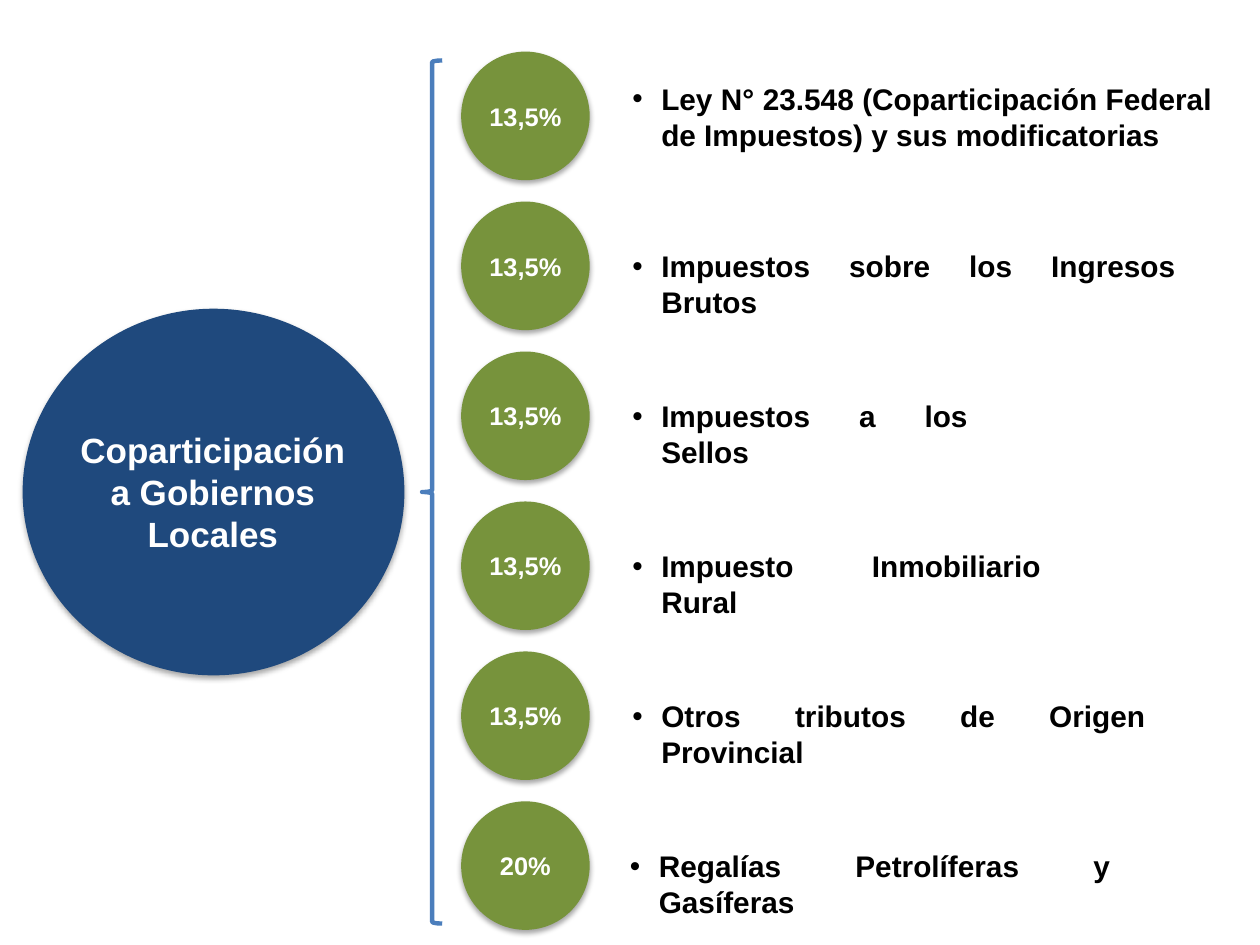
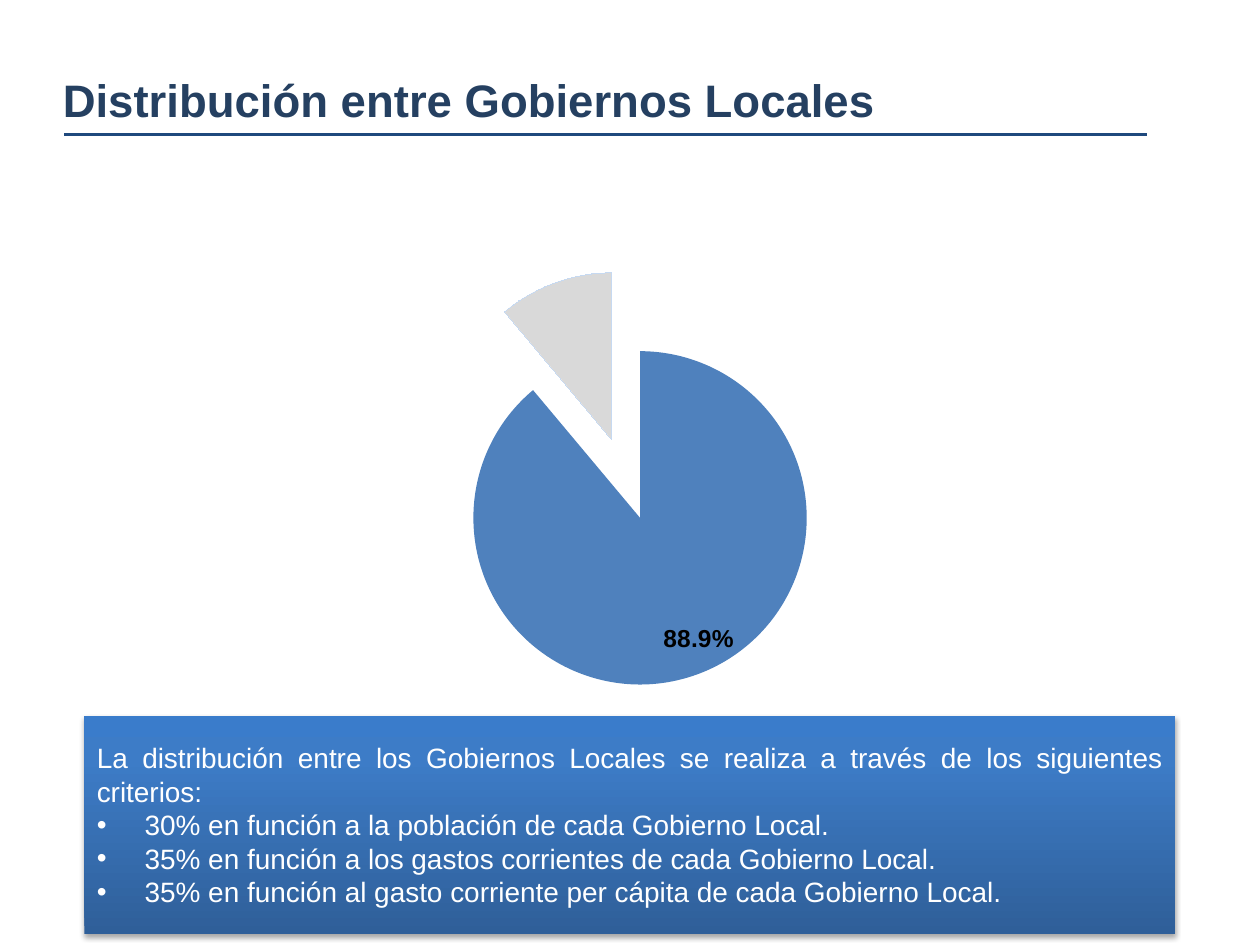
from dataclasses import dataclass
from typing import Any

from lxml.etree import SubElement
from pptx import Presentation
from pptx.chart.data import CategoryChartData
from pptx.dml.color import RGBColor
from pptx.enum.chart import XL_CHART_TYPE as ChartKind, XL_LABEL_POSITION as LabelPlace
from pptx.enum.shapes import MSO_CONNECTOR as Connector, MSO_SHAPE as Preset
from pptx.enum.text import MSO_ANCHOR as Anchor, PP_ALIGN as Align
from pptx.oxml.ns import qn
from pptx.util import Inches, Pt

WHITE = RGBColor(0xFF, 0xFF, 0xFF)
BLACK = RGBColor(0x00, 0x00, 0x00)
NAVY = RGBColor(0x1F, 0x49, 0x7D)
TITLE_NAVY = RGBColor(0x25, 0x40, 0x61)
GREEN = RGBColor(0x77, 0x93, 0x3C)
BRACE_BLUE = RGBColor(0x4B, 0x7E, 0xBC)
PIE_BLUE = RGBColor(0x4F, 0x81, 0xBD)
PIE_GREY = RGBColor(0xD9, 0xD9, 0xD9)
PALE_BLUE = RGBColor(0xC6, 0xD9, 0xF1)
PANEL_STOPS = ((0, RGBColor(0x2F, 0x5F, 0x99)), (80, RGBColor(0x3D, 0x7C, 0xC7)),
               (100, RGBColor(0x3A, 0x7C, 0xCB)))

FIRST_TOP, ROW_PITCH, CIRCLE_SIZE = 0.41, 1.19, 1.02
PERCENT_FORMAT = "0.0%"


@dataclass(frozen=True)
class TextStyle:
    """Size, colour and alignment of a paragraph."""
    size: float
    color: RGBColor
    bold: bool = True
    align: Align = Align.LEFT


@dataclass(frozen=True)
class Box:
    """Place of an element in inches."""
    left: float
    top: float
    width: float
    height: float

    def lengths(self) -> list:
        """Return the four lengths for python-pptx."""
        return [Inches(v) for v in (self.left, self.top, self.width, self.height)]


@dataclass(frozen=True)
class Tax:
    """A shared tax with its percentage."""
    share: str
    name: str
    width: float
    left: float = 4.92
    drop: float = 0.32


TITLE = TextStyle(26, TITLE_NAVY)
SHARE = TextStyle(14.5, WHITE, align=Align.CENTER)
HUB = TextStyle(20, WHITE, align=Align.CENTER)
TAX = TextStyle(17, BLACK, align=Align.JUSTIFY)
CRITERIA_LEAD = TextStyle(16, WHITE, False, Align.JUSTIFY)
CRITERION = TextStyle(16, WHITE, False)

TAXES = (
    Tax("13,5%", "Ley N° 23.548 (Coparticipación Federal de Impuestos) y sus modificatorias",
        4.8, drop=0.18),
    Tax("13,5%", "Impuestos sobre los Ingresos Brutos", 4.51),
    Tax("13,5%", "Impuestos a los Sellos", 2.86),
    Tax("13,5%", "Impuesto Inmobiliario Rural", 3.44),
    Tax("13,5%", "Otros tributos de Origen Provincial", 4.27),
    Tax("20%", "Regalías Petrolíferas y Gasíferas", 4.01, left=4.9),
)
CRITERIA = (
    "30% en función a la población de cada Gobierno Local.",
    "35% en función a los gastos corrientes de cada Gobierno Local.",
    "35% en función al gasto corriente per cápita de cada Gobierno Local.",
)


def apply(target: Any, values: dict) -> None:
    """Set each named attribute on the target."""
    for name, value in values.items():
        setattr(target, name, value)


def write(paragraph: Any, text: str, style: TextStyle, indent: float = 0) -> None:
    """Fill a paragraph, bulleted when it has an indent."""
    if indent:
        props = paragraph._p.get_or_add_pPr()
        props.set("marL", str(Inches(indent)))
        props.set("indent", str(-Inches(indent)))
        SubElement(props, qn("a:buFont")).set("typeface", "Arial")
        SubElement(props, qn("a:buChar")).set("char", "•")
    run = paragraph.add_run()
    run.text = text
    paragraph.alignment = style.align
    apply(run.font, {"name": "Arial", "size": Pt(style.size), "bold": style.bold})
    run.font.color.rgb = style.color


def add_text(slide: Any, box: Box, text: str, style: TextStyle, indent: float = 0) -> None:
    """Add a wrapping text box with one paragraph."""
    frame = slide.shapes.add_textbox(*box.lengths()).text_frame
    frame.word_wrap = True
    write(frame.paragraphs[0], text, style, indent)


def add_raised(slide: Any, preset: Preset, box: Box) -> Any:
    """Add a borderless shape with a soft shadow below."""
    shape = slide.shapes.add_shape(preset, *box.lengths())
    shape.line.fill.background()
    shape.shadow.inherit = False
    effects = shape._element.spPr.find(qn("a:effectLst"))
    shadow = SubElement(effects, qn("a:outerShdw"), blurRad=str(Pt(3.1)), dist=str(Pt(1.8)),
                        dir="5400000", rotWithShape="0")
    tone = SubElement(shadow, qn("a:srgbClr"), val=str(BLACK))
    SubElement(tone, qn("a:alpha"), val="35000")
    apply(shape.text_frame, {"word_wrap": True, "vertical_anchor": Anchor.MIDDLE})
    return shape


def add_disc(slide: Any, box: Box, color: RGBColor, text: str, style: TextStyle,
             margins: tuple = (0, 0, 0, 0)) -> None:
    """Add a filled ellipse with a centred label."""
    disc = add_raised(slide, Preset.OVAL, box)
    disc.fill.solid()
    disc.fill.fore_color.rgb = color
    sides = ("margin_left", "margin_top", "margin_right", "margin_bottom")
    apply(disc.text_frame, dict(zip(sides, map(Inches, margins))))
    write(disc.text_frame.paragraphs[0], text, style)


def add_title(slide: Any, text: str) -> None:
    """Add the heading and the rule beneath it."""
    rule = slide.shapes.add_connector(Connector.STRAIGHT, Inches(0.51), Inches(1.07),
                                      Inches(9.1), Inches(1.07))
    rule.line.color.rgb = NAVY
    rule.line.width = Pt(1.5)
    SubElement(rule._element.spPr, qn("a:effectLst"))
    add_text(slide, Box(0.4, 0.52, 8.82, 0.54), text, TITLE)


def add_criteria(slide: Any) -> None:
    """Add the gradient panel listing the criteria."""
    panel = add_raised(slide, Preset.RECTANGLE, Box(0.67, 5.68, 8.66, 1.73))
    panel.fill.gradient()
    panel.fill.gradient_angle = 90
    stops = panel._element.spPr.find(qn("a:gradFill")).find(qn("a:gsLst"))
    for stop in list(stops):
        stops.remove(stop)
    for position, color in PANEL_STOPS:
        stop = SubElement(stops, qn("a:gs"), pos=str(position * 1000))
        SubElement(stop, qn("a:srgbClr"), val=str(color))
    frame = panel.text_frame
    write(frame.paragraphs[0], "La distribución entre los Gobiernos Locales se realiza "
          "a través de los siguientes criterios:", CRITERIA_LEAD)
    for criterion in CRITERIA:
        write(frame.add_paragraph(), criterion, CRITERION, 0.38)


def add_layout(parent: Any, settings: dict) -> Any:
    """Add a manual layout to a chart element."""
    layout = parent.find(qn("c:layout"))
    if layout is None:
        layout = SubElement(parent, qn("c:layout"))
        parent.insert(0, layout)
    manual = SubElement(layout, qn("c:manualLayout"))
    for tag, value in settings.items():
        SubElement(manual, qn(f"c:{tag}")).set("val", str(value))
    return layout


def label_main_share(series: Any) -> None:
    """Label the first slice with its percentage and hide the other label."""
    labels = series.data_labels
    apply(labels, {"show_percentage": True, "show_value": False,
                   "number_format": PERCENT_FORMAT, "number_format_is_linked": False})
    main = series.points[0].data_label
    for part in (labels, main):
        part.position = LabelPlace.INSIDE_END
        apply(part.font, {"name": "Arial", "size": Pt(14), "bold": True})
        part.font.color.rgb = BLACK
    shown = labels._element.find(qn("c:dLbl"))
    shown.find(qn("c:showVal")).set("val", "0")
    shown.find(qn("c:showPercent")).set("val", "1")
    layout = add_layout(shown, {"x": 0.04, "y": -0.03})
    shown.find(qn("c:idx")).addnext(layout)
    number = SubElement(shown, qn("c:numFmt"), formatCode=PERCENT_FORMAT, sourceLinked="0")
    layout.addnext(number)

    hidden = SubElement(labels._element, qn("c:dLbl"))
    SubElement(hidden, qn("c:idx")).set("val", "1")
    SubElement(hidden, qn("c:delete")).set("val", "1")
    shown.addnext(hidden)


def add_pie(slide: Any) -> None:
    """Add the exploded pie with the main share labelled."""
    shares = CategoryChartData()
    shares.categories = ["1", "2"]
    shares.add_series("Series 1", (88.9, 11.1))
    chart = slide.shapes.add_chart(ChartKind.PIE, *Box(1.06, 1.98, 7.87, 3.86).lengths(),
                                   shares).chart
    apply(chart, {"has_legend": False, "has_title": False})
    apply(chart.font, {"name": "Calibri", "size": Pt(10)})
    chart.font.color.rgb = BLACK
    add_layout(chart._chartSpace.chart.plotArea,
               {"layoutTarget": "inner", "xMode": "edge", "yMode": "edge",
                "x": 0, "y": 0.043, "w": 0.993, "h": 0.857})
    chart.plots[0].vary_by_categories = True
    series = chart.plots[0].series[0]
    for index, color in enumerate((PIE_BLUE, PIE_GREY)):
        slice_format = series.points[index].format
        slice_format.fill.solid()
        slice_format.fill.fore_color.rgb = color
    series.points[0].format.line.fill.background()
    series.points[1].format.line.color.rgb = PALE_BLUE
    label_main_share(series)

    explosion = SubElement(series._element, qn("c:explosion"))
    explosion.set("val", "25")
    series._element.find(qn("c:dPt")).addprevious(explosion)


def build_shares(slide: Any) -> None:
    """Draw the taxes shared with local governments."""
    brace = slide.shapes.add_shape(Preset.LEFT_BRACE, *Box(3.35, 0.48, 0.16, 6.85).lengths())
    brace.fill.background()
    brace.line.color.rgb = BRACE_BLUE
    brace.line.width = Pt(2.5)
    brace.shadow.inherit = False
    add_disc(slide, Box(0.18, 2.45, 3.03, 2.91), NAVY, "Coparticipación a Gobiernos Locales",
             HUB, (0, 0.04, 0.01, 0.05))
    for row, tax in enumerate(TAXES):
        top = FIRST_TOP + row * ROW_PITCH
        add_text(slide, Box(tax.left, top + tax.drop, tax.width, 0.39), tax.name, TAX, 0.23)
        add_disc(slide, Box(3.66, top, CIRCLE_SIZE, CIRCLE_SIZE), GREEN, tax.share, SHARE)


def build_distribution(slide: Any) -> None:
    """Draw how the funds are distributed."""
    add_title(slide, "Distribución entre Gobiernos Locales")
    add_criteria(slide)
    add_pie(slide)


def main() -> None:
    """Build and save the presentation."""
    deck = Presentation()
    apply(deck, {"slide_width": Inches(10), "slide_height": Inches(7.5)})
    for build in (build_shares, build_distribution):
        build(deck.slides.add_slide(deck.slide_layouts[6]))
    deck.save("out.pptx")


if __name__ == "__main__":
    main()
